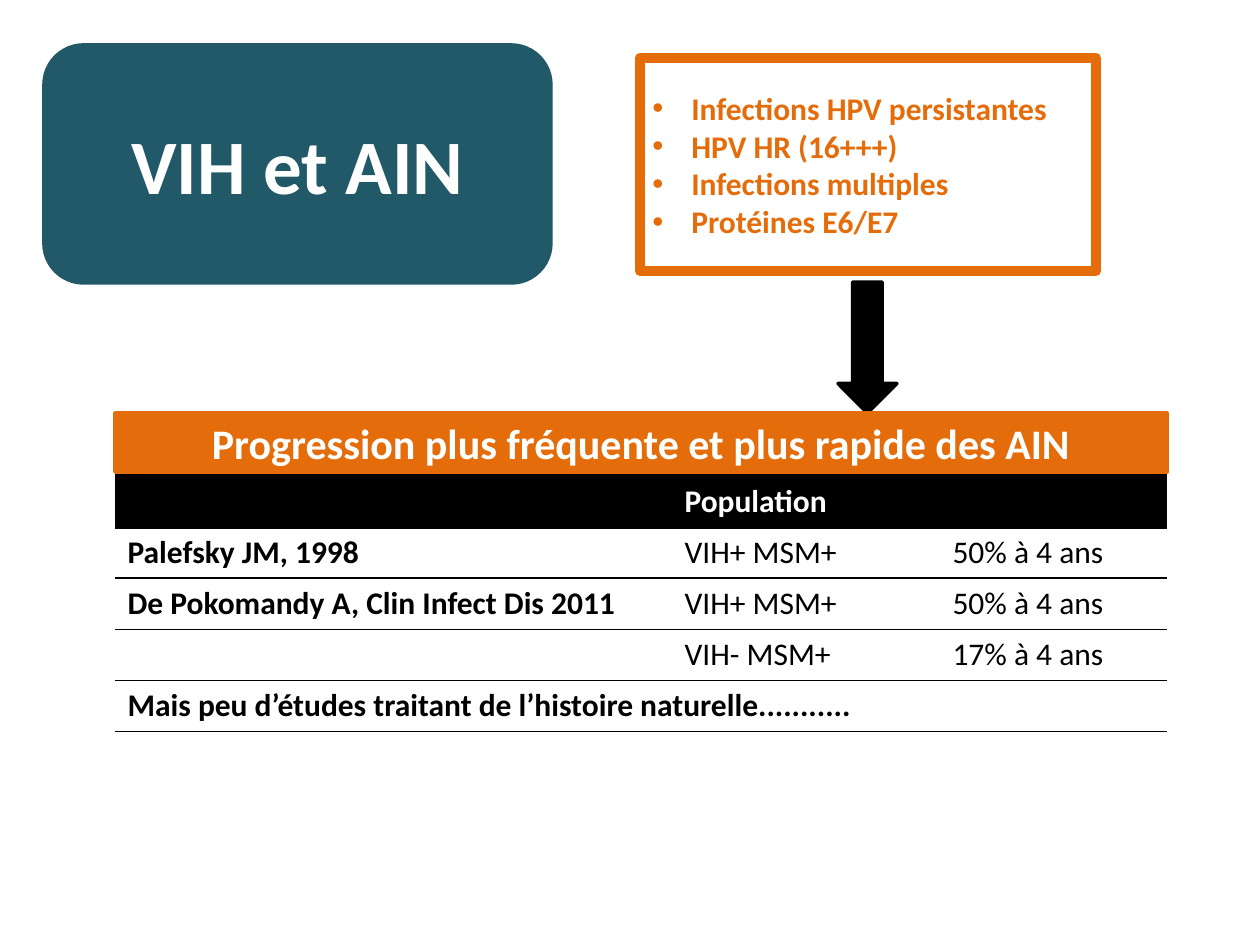
from lxml import etree
from pptx import Presentation
from pptx.dml.color import RGBColor
from pptx.enum.shapes import MSO_SHAPE
from pptx.enum.text import MSO_ANCHOR, PP_ALIGN
from pptx.oxml.ns import qn
from pptx.util import Pt

ROUNDED = MSO_SHAPE.ROUNDED_RECTANGLE
RECTANGLE = MSO_SHAPE.RECTANGLE
DOWN_ARROW = MSO_SHAPE.DOWN_ARROW
MIDDLE = MSO_ANCHOR.MIDDLE
LEFT = PP_ALIGN.LEFT
CENTER = PP_ALIGN.CENTER

PX = 914400 / 126
COLORS = {"teal": "215968", "orange": "E46C0A", "black": "000000", "white": "FFFFFF"}


def px(value):
    return round(value * PX)


def write(para, text, size, color, bold, align):
    para.alignment = align
    span = para.add_run()
    span.text = text
    span.font.color.rgb = RGBColor.from_string(COLORS[color])
    for name, value in {"name": "Calibri", "size": Pt(size), "bold": bold}.items():
        setattr(span.font, name, value)


deck = Presentation()
deck.slide_width = px(1260)
deck.slide_height = px(945)
page = deck.slides.add_slide(deck.slide_layouts[6])

risks = ["Infections HPV persistantes", "HPV HR (16+++)", "Infections multiples", "Protéines E6/E7"]
shapes = [
    (ROUNDED, (44, 45, 507, 238), "teal", "teal", 2, ["VIH et AIN"], 44, "white", CENTER),
    (RECTANGLE, (640, 58, 456, 213), "white", "orange", 6, risks, 18, "orange", LEFT),
    (DOWN_ARROW, (838, 282, 59, 131), "black", "black", 2, [], 18, "white", CENTER),
    (RECTANGLE, (115, 413, 1052, 59), "orange", "orange", 2,
     ["Progression plus fréquente et plus rapide des AIN"], 24, "white", CENTER),
]
for kind, place, fill, line, width, texts, size, color, align in shapes:
    box = page.shapes.add_shape(kind, *map(px, place))
    box.shadow.inherit = False
    box.fill.solid()
    box.fill.fore_color.rgb = RGBColor.from_string(COLORS[fill])
    box.line.color.rgb = RGBColor.from_string(COLORS[line])
    box.line.width = Pt(width)
    frame = box.text_frame
    frame.word_wrap = True
    frame.vertical_anchor = MIDDLE
    for index, text in enumerate(texts):
        para = frame.add_paragraph() if index else frame.paragraphs[0]
        write(para, text, size, color, True, align)
        if texts is risks:
            properties = para._p.get_or_add_pPr()
            properties.set("marL", str(px(39)))
            properties.set("indent", str(-px(39)))
            etree.SubElement(properties, qn("a:buFont"), typeface="Arial")
            etree.SubElement(properties, qn("a:buChar"), char="•")

rows = [
    ["", "Population", ""],
    ["Palefsky JM, 1998", "VIH+ MSM+", "50% à 4 ans"],
    ["De Pokomandy A, Clin Infect Dis 2011", "VIH+ MSM+", "50% à 4 ans"],
    ["", "VIH- MSM+", "17% à 4 ans"],
    ["Mais peu d’études traitant de l’histoire naturelle...........", "", ""],
]
table = page.shapes.add_table(len(rows), 3, px(115), px(476), px(1052), px(255)).table
table.horz_banding = False
for column, width in zip(table.columns, (557, 217, 278)):
    column.width = px(width)
for row in table.rows:
    row.height = px(51)
table.cell(4, 0).merge(table.cell(4, 2))

for r, texts in enumerate(rows):
    header = r == 0
    for c, text in enumerate(texts):
        cell = table.cell(r, c)
        cell.fill.solid()
        cell.fill.fore_color.rgb = RGBColor.from_string(COLORS["black" if header else "white"])
        if text:
            write(cell.text_frame.paragraphs[0], text, 18, "white" if header else "black",
                  header or c == 0, CENTER if c == 2 else LEFT)
        top = 2 if r < 2 else 1
        borders = {"lnL": 0, "lnR": 0, "lnT": top, "lnB": 2 if header else 1}
        for position, (side, weight) in enumerate(borders.items()):
            edge = etree.Element(qn(f"a:{side}"), w=str(Pt(weight)))
            if weight:
                paint = etree.SubElement(edge, qn("a:solidFill"))
                etree.SubElement(paint, qn("a:srgbClr"), val=COLORS["black"])
            else:
                etree.SubElement(edge, qn("a:noFill"))
            cell._tc.get_or_add_tcPr().insert(position, edge)

deck.save("out.pptx")
